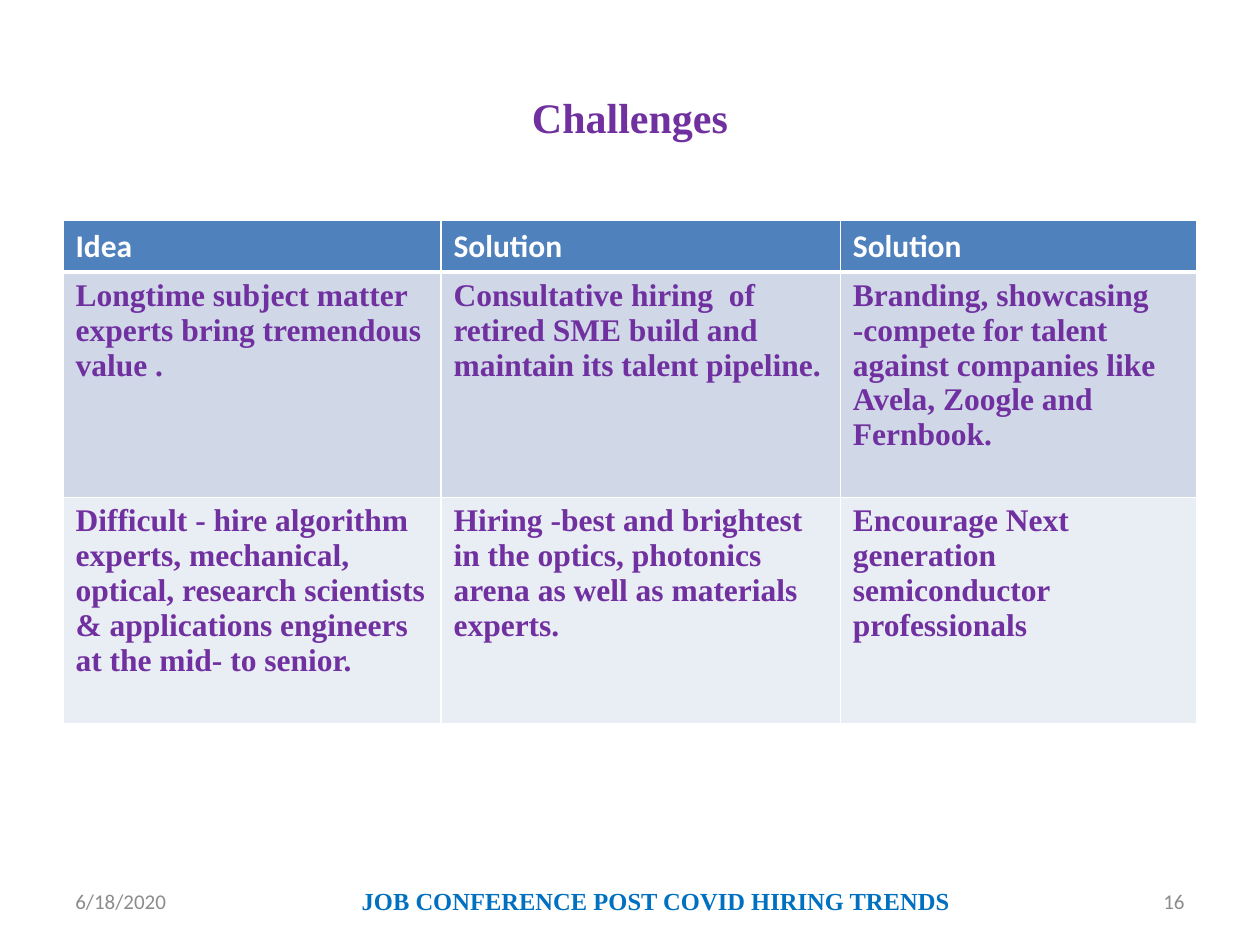
from lxml import etree
from pptx import Presentation
from pptx.dml.color import RGBColor
from pptx.enum import text
from pptx.oxml import ns
from pptx.util import Cm, Pt

HUES = {"plum": "7030A0", "head": "4F81BD", "odd": "D0D8E8", "even": "E9EDF4",
        "white": "FFFFFF", "gray": "8C8C8C", "blue": "0070C0"}
SERIF, SANS = "Times New Roman", "Calibri"
LEFT, WIDE = 1.27, 22.86
AL = text.PP_ALIGN


def write(frame, words, size, face, hue, bold=True, align=AL.LEFT):
    frame.word_wrap = True
    para = frame.paragraphs[0]
    para.alignment = align
    run = para.add_run()
    run.text = words
    for key, val in {"size": Pt(size), "name": face, "bold": bold}.items():
        setattr(run.font, key, val)
    run.font.color.rgb = RGBColor.from_string(HUES[hue])


def edge(cell, sides):
    """Draw white cell borders; sides maps a tag to a width in points."""
    props = cell._tc.get_or_add_tcPr()
    for tag, width in sides.items():
        line = etree.SubElement(props, ns.qn(f"a:{tag}"), w=str(Pt(width)))
        fill = etree.SubElement(line, ns.qn("a:solidFill"))
        etree.SubElement(fill, ns.qn("a:srgbClr"), val=HUES["white"])


deck = Presentation()
deck.slide_width, deck.slide_height = Cm(25.4), Cm(19.05)
slide = deck.slides.add_slide(deck.slide_layouts[5])

# Title
title = slide.shapes.title
place = {"left": LEFT, "top": 0.76, "width": WIDE, "height": 3.18}
for key, val in place.items():
    setattr(title, key, Cm(val))
title.text_frame.vertical_anchor = text.MSO_ANCHOR.MIDDLE
write(title.text_frame, "Challenges", 24, SERIF, "plum", align=AL.CENTER)

# Table
rows = [
    ("Idea", "Solution", "Solution"),
    ("Longtime subject matter experts bring tremendous value .",
     "Consultative hiring  of retired SME build and maintain its talent pipeline.",
     "Branding, showcasing -compete for talent against companies like "
     "Avela, Zoogle and Fernbook."),
    ("Difficult - hire algorithm experts, mechanical, optical, research scientists "
     "& applications engineers at the mid- to senior.",
     "Hiring -best and brightest in the optics, photonics arena as well as "
     "materials experts.",
     "Encourage Next generation semiconductor professionals"),
]
cols, highs = [7.62, 8.05, 7.19], [1.03, 4.55, 4.55]
fills = ["head", "odd", "even"]
grid = slide.shapes.add_table(len(rows), len(cols), Cm(LEFT), Cm(4.45),
                              Cm(WIDE), Cm(sum(highs))).table
for col, width in zip(grid.columns, cols):
    col.width = Cm(width)
for i, (row, high) in enumerate(zip(rows, highs)):
    grid.rows[i].height = Cm(high)
    face, hue = (SERIF, "plum") if i else (SANS, "white")
    for j, words in enumerate(row):
        cell = grid.cell(i, j)
        edge(cell, {"lnL": 1, "lnR": 1, "lnT": 3 if i == 1 else 1,
                    "lnB": 1 if i else 3})
        cell.fill.solid()
        cell.fill.fore_color.rgb = RGBColor.from_string(HUES[fills[i]])
        write(cell.text_frame, words, 18, face, hue)

# Footer
foot = [
    (LEFT, 5.92, "6/18/2020", 12, SANS, "gray", False, AL.LEFT),
    (18.21, 5.92, "16", 12, SANS, "gray", False, AL.RIGHT),
    (6.55, 13.34, "JOB CONFERENCE POST COVID HIRING TRENDS", 14, SERIF, "blue",
     True, AL.CENTER),
]
for left, width, *style in foot:
    box = slide.shapes.add_textbox(Cm(left), Cm(17.65), Cm(width), Cm(1.02))
    box.text_frame.vertical_anchor = text.MSO_ANCHOR.MIDDLE
    write(box.text_frame, *style)

deck.save("out.pptx")
